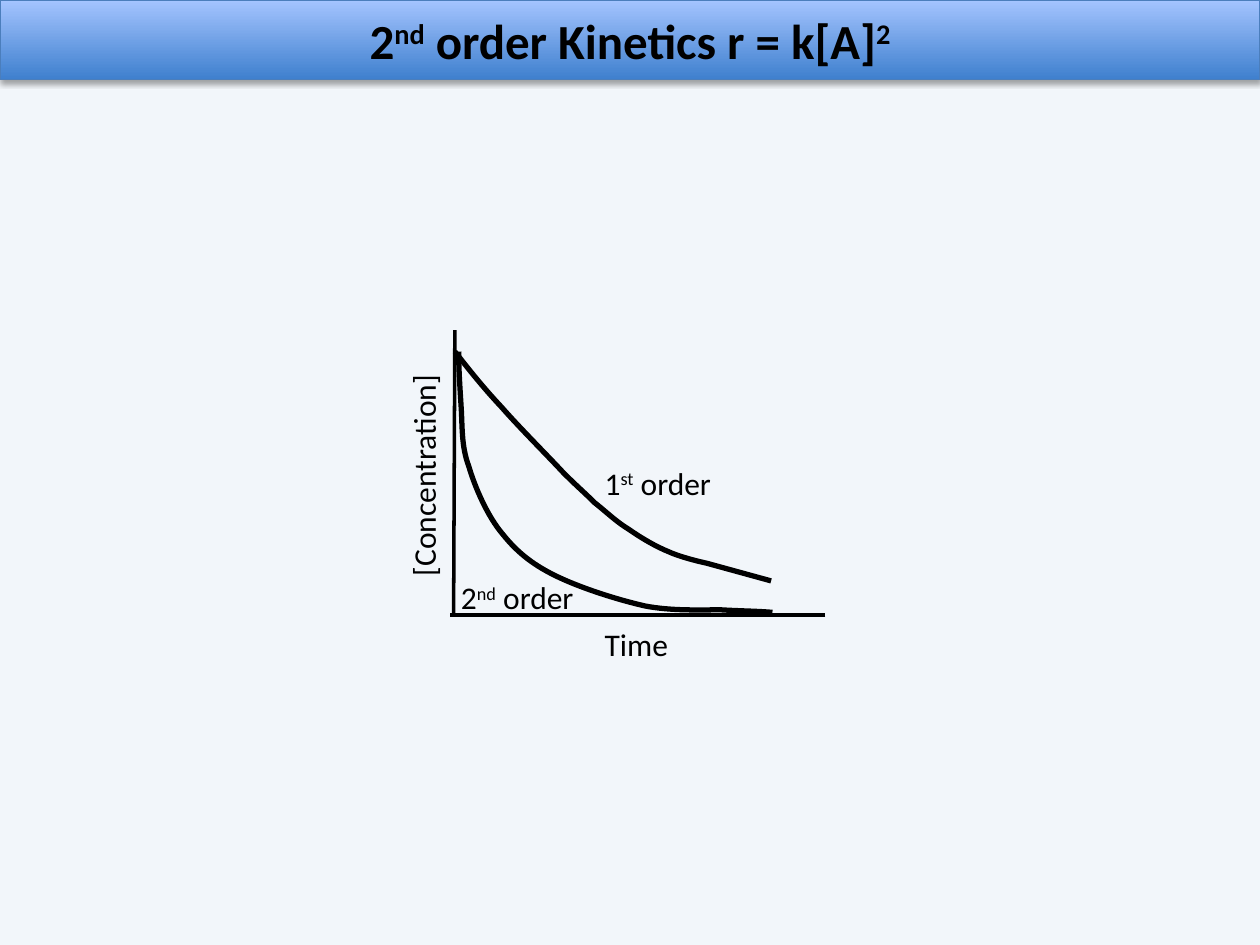
import lxml.etree
import pptx
import pptx.dml.color
import pptx.enum.shapes
import pptx.enum.text
import pptx.oxml.ns
import pptx.util

WIDTH, HEIGHT = 10, 7.5
BACKGROUND, INK = "F2F6FA", "000000"
BAND_BOTTOM, BAND_TOP, BAND_EDGE = "3F80CE", "A4C4FF", "4B7EBC"
BAND_HEIGHT = 0.63

TITLE = [("2", False), ("nd", True), (" order Kinetics r = k[A]", False), ("2", True)]
CONCENTRATION = ([("[Concentration]", False)], (2.45, 3.56, 1.82, 0.4), 270)
LABELS = [
    ([("Time", False)], (4.7, 4.91, 0.71, 0.4), 0),
    ([("1", False), ("st", True), (" order", False)], (4.7, 3.63, 1.07, 0.4), 0),
    ([("2", False), ("nd", True), (" order", False)], (3.56, 4.54, 1.13, 0.4), 0),
]
AXES = [((3.61, 2.62), (3.6, 4.88)), ((6.55, 4.88), (3.57, 4.88))]
SECOND_ORDER = [
    (3.64, 2.79), (3.64, 2.93), (3.65, 3.07), (3.66, 3.23),
    (3.67, 3.38), (3.66, 3.54), (3.72, 3.7),
    (3.77, 3.87), (3.87, 4.1), (3.99, 4.24),
    (4.11, 4.39), (4.24, 4.49), (4.43, 4.58),
    (4.62, 4.67), (4.9, 4.76), (5.12, 4.81),
    (5.33, 4.85), (5.56, 4.84), (5.72, 4.84),
    (5.89, 4.85), (6.01, 4.85), (6.13, 4.86),
]
FIRST_ORDER = [
    (3.61, 2.79), (3.72, 2.93), (3.83, 3.07), (3.98, 3.23),
    (4.12, 3.39), (4.35, 3.62), (4.47, 3.75),
    (4.59, 3.87), (4.64, 3.91), (4.72, 3.99),
    (4.81, 4.06), (4.89, 4.14), (4.99, 4.2),
    (5.09, 4.27), (5.21, 4.34), (5.31, 4.38),
    (5.42, 4.43), (5.61, 4.47), (5.61, 4.47),
    (6.12, 4.61),
]


def color(value):
    return pptx.dml.color.RGBColor.from_string(value)


def inches(values):
    return [pptx.util.Inches(value) for value in values]


def write(frame, pieces, size=18, bold=None, align=None):
    paragraph = frame.paragraphs[0]
    paragraph.alignment = align
    for text, raised in pieces:
        run = paragraph.add_run()
        run.text = text
        run.font.name, run.font.size, run.font.bold = "Calibri", pptx.util.Pt(size), bold
        run.font.color.rgb = color(INK)
        if raised:
            run.font._element.set("baseline", "30000")


def stroke(line, width, value=INK):
    line.color.rgb = color(value)
    line.width = pptx.util.Pt(width)


def add_element(parent, tag, **attributes):
    return lxml.etree.SubElement(parent, pptx.oxml.ns.qn(tag), **attributes)


def add_title(slide):
    band = slide.shapes.title
    band.left, band.top, band.width, band.height = inches((0, 0, WIDTH, BAND_HEIGHT))
    band.fill.gradient()
    band.fill.gradient_angle = 90
    for stop, value in zip(band.fill.gradient_stops, (BAND_BOTTOM, BAND_TOP)):
        stop.color.rgb = color(value)
    stroke(band.line, 0.75, BAND_EDGE)
    band.shadow.inherit = False
    effects = band._element.spPr.find(pptx.oxml.ns.qn("a:effectLst"))
    shadow = add_element(effects, "a:outerShdw", blurRad="40000", dist="23000",
                         dir="5400000", rotWithShape="0")
    add_element(add_element(shadow, "a:srgbClr", val=INK), "a:alpha", val="35000")
    frame = band.text_frame
    frame.auto_size = pptx.enum.text.MSO_AUTO_SIZE.NONE
    frame.vertical_anchor = pptx.enum.text.MSO_ANCHOR.MIDDLE
    write(frame, TITLE, size=28, bold=True, align=pptx.enum.text.PP_ALIGN.CENTER)


def add_axis(shapes, start, end):
    axis = shapes.add_connector(
        pptx.enum.shapes.MSO_CONNECTOR.STRAIGHT, *inches(start + end))
    stroke(axis.line, 2)
    add_element(axis._element.spPr, "a:effectLst")


def bend(curve):
    segments = list(curve._element.iter(pptx.oxml.ns.qn("a:lnTo")))
    outline = segments[0].getparent()
    bends = len(segments) // 3
    for index in range(bends):
        bezier = add_element(outline, "a:cubicBezTo")
        for segment in segments[3 * index:3 * index + 3]:
            bezier.append(segment[0])
            outline.remove(segment)
    for segment in segments[3 * bends:]:
        outline.append(segment)


def add_curve(shapes, controls):
    points = [inches(point) for point in controls]
    builder = shapes.build_freeform(*points[0])
    builder.add_line_segments(points[1:], close=False)
    curve = builder.convert_to_shape()
    bend(curve)
    curve.fill.background()
    stroke(curve.line, 3)
    curve.shadow.inherit = False


def add_label(shapes, pieces, place, rotation):
    label = shapes.add_textbox(*inches(place))
    label.rotation = rotation
    label.text_frame.word_wrap = False
    label.text_frame.auto_size = pptx.enum.text.MSO_AUTO_SIZE.SHAPE_TO_FIT_TEXT
    write(label.text_frame, pieces)


def main():
    deck = pptx.Presentation()
    deck.slide_width, deck.slide_height = inches((WIDTH, HEIGHT))
    slide = deck.slides.add_slide(deck.slide_layouts.get_by_name("Title Only"))
    slide.background.fill.solid()
    slide.background.fill.fore_color.rgb = color(BACKGROUND)
    add_title(slide)
    graph = slide.shapes.add_group_shape()
    for start, end in AXES:
        add_axis(graph.shapes, start, end)
    add_label(graph.shapes, *CONCENTRATION)
    for controls in (SECOND_ORDER, FIRST_ORDER):
        add_curve(slide.shapes, controls)
    for label in LABELS:
        add_label(slide.shapes, *label)
    deck.save("out.pptx")


if __name__ == "__main__":
    main()
